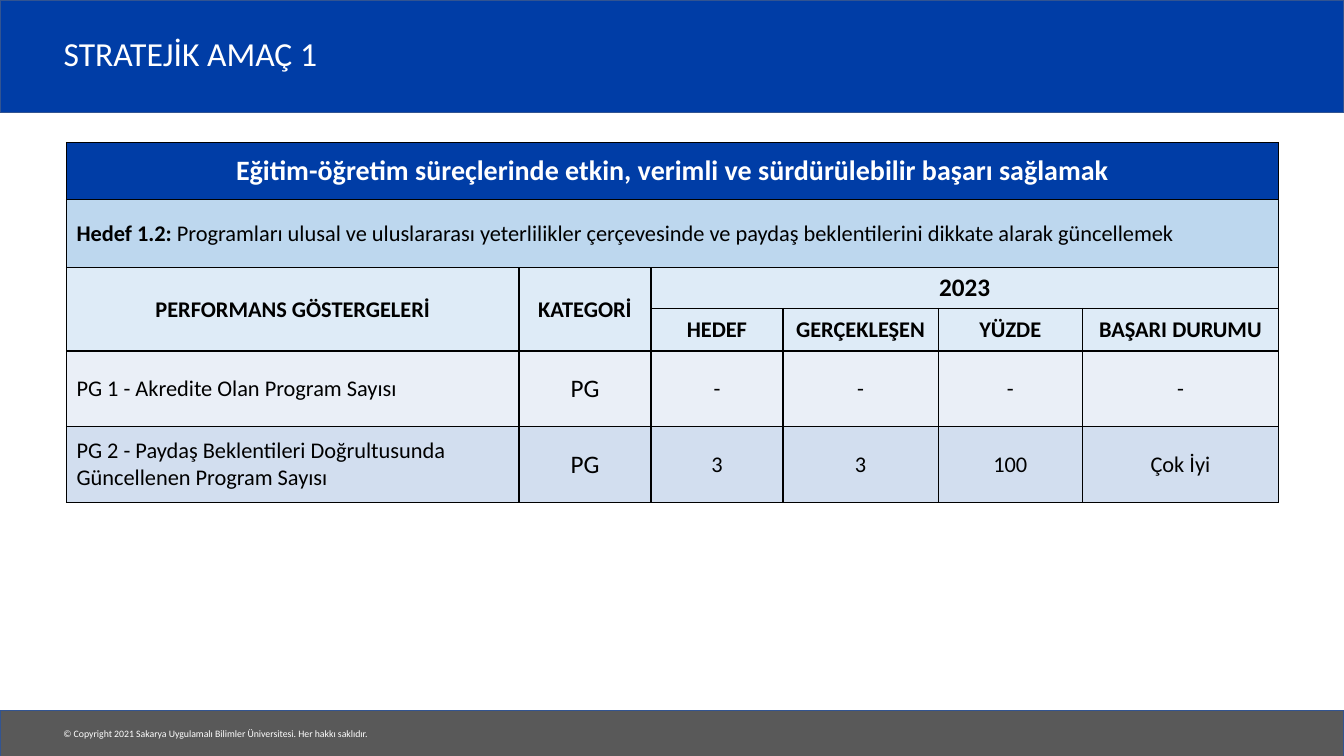
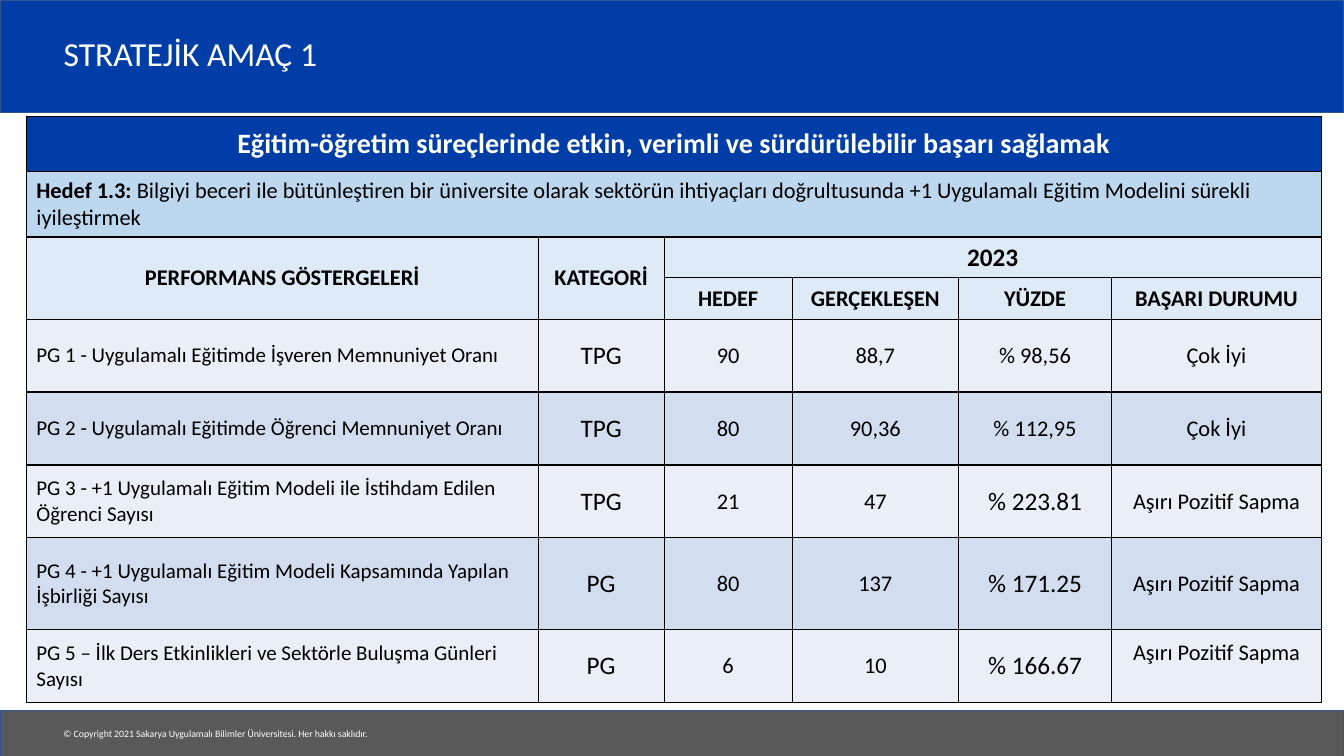
from dataclasses import dataclass
from typing import NamedTuple

import pptx
import pptx.dml.color
import pptx.enum.shapes
import pptx.enum.text
import pptx.oxml
import pptx.oxml.ns
import pptx.util

Pt = pptx.util.Pt
Align = pptx.enum.text.PP_ALIGN
Anchor = pptx.enum.text.MSO_ANCHOR

SLIDE_WIDTH, SLIDE_HEIGHT = 960, 540
FONT = "Calibri"
COLOURS = {
    "blue": "003DA6",
    "grey": "595959",
    "band_line": "325491",
    "target": "BDD7EE",
    "heading": "DEEBF7",
    "row_light": "EAEFF7",
    "row_dark": "D2DEEF",
    "black": "000000",
    "white": "FFFFFF",
}
TITLE = "STRATEJİK AMAÇ 1"
COPYRIGHT = "© Copyright 2021 Sakarya Uygulamalı Bilimler Üniversitesi. Her hakkı saklıdır."
GOAL = "Eğitim-öğretim süreçlerinde etkin, verimli ve sürdürülebilir başarı sağlamak"
YEAR = "2023"
ROW_HEADINGS = ["PERFORMANS GÖSTERGELERİ", "KATEGORİ"]
YEAR_HEADINGS = ["HEDEF", "GERÇEKLEŞEN", "YÜZDE", "BAŞARI DURUMU"]
HEADER_ROWS = 4


class Band(NamedTuple):
    top: float
    height: float
    fill: str


class Indicator(NamedTuple):
    name: str
    category: str
    target: str
    actual: str
    percent: str
    status: str
    percent_size: float = 16
    status_bottom: float = 3.6


@dataclass
class TargetTable:
    left: float
    top: float
    widths: list[float]
    heights: list[float]
    label: str
    target: str
    indicators: list[Indicator]
    name_size: float


BANDS = [Band(0, 80.6, "blue"), Band(507.4, 32.9, "grey")]

TABLES = [
    TargetTable(
        left=47.5,
        top=102,
        widths=[323.2, 94.3, 94.3, 110.9, 103, 140.1],
        heights=[40.4, 48.8, 29.2, 30.4, 54, 54],
        label="Hedef 1.2: ",
        target="Programları ulusal ve uluslararası yeterlilikler çerçevesinde ve "
               "paydaş beklentilerini dikkate alarak güncellemek",
        indicators=[
            Indicator("PG 1 - Akredite Olan Program Sayısı", "PG", "-", "-", "-", "-"),
            Indicator("PG 2 - Paydaş Beklentileri Doğrultusunda Güncellenen Program Sayısı",
                      "PG", "3", "3", "100", "Çok İyi"),
        ],
        name_size=16,
    ),
    TargetTable(
        left=18.8,
        top=83.4,
        widths=[365.6, 90, 91.5, 118.8, 109.4, 149.8],
        heights=[38.9, 47, 29.2, 29.5, 52.1, 52.1, 52.1, 65.6, 52.1],
        label="Hedef 1.3: ",
        target="Bilgiyi beceri ile bütünleştiren bir üniversite olarak sektörün ihtiyaçları "
               "doğrultusunda +1 Uygulamalı Eğitim Modelini sürekli iyileştirmek",
        indicators=[
            Indicator("PG 1 - Uygulamalı Eğitimde İşveren Memnuniyet Oranı",
                      "TPG", "90", "88,7", "% 98,56", "Çok İyi"),
            Indicator("PG 2 - Uygulamalı Eğitimde Öğrenci Memnuniyet Oranı",
                      "TPG", "80", "90,36", "% 112,95", "Çok İyi"),
            Indicator("PG 3 - +1 Uygulamalı Eğitim Modeli ile İstihdam Edilen Öğrenci Sayısı",
                      "TPG", "21", "47", "% 223.81", "Aşırı Pozitif Sapma", 18),
            Indicator("PG 4 - +1 Uygulamalı Eğitim Modeli Kapsamında Yapılan İşbirliği Sayısı",
                      "PG", "80", "137", "% 171.25", "Aşırı Pozitif Sapma", 18),
            Indicator("PG 5 – İlk Ders Etkinlikleri ve Sektörle Buluşma Günleri Sayısı",
                      "PG", "6", "10", "% 166.67", "Aşırı Pozitif Sapma", 18, 22),
        ],
        name_size=15,
    ),
]


def rgb(name: str) -> pptx.dml.color.RGBColor:
    return pptx.dml.color.RGBColor.from_string(COLOURS[name])


def format_run(run, size: float, colour: str, bold: bool = False) -> None:
    run.font.name = FONT
    run.font.size = Pt(size)
    run.font.bold = bold
    run.font.color.rgb = rgb(colour)


def dress_layout(layout, slide) -> None:
    """Draw the bands and copyright line on the slide, then move them to its layout."""
    for placeholder in list(layout.placeholders):
        if placeholder.placeholder_format.idx != 0:
            placeholder.element.getparent().remove(placeholder.element)
    parts = []
    for band in BANDS:
        shape = slide.shapes.add_shape(
            pptx.enum.shapes.MSO_SHAPE.RECTANGLE,
            Pt(0), Pt(band.top), Pt(SLIDE_WIDTH), Pt(band.height))
        shape.shadow.inherit = False
        shape.fill.solid()
        shape.fill.fore_color.rgb = rgb(band.fill)
        shape.line.color.rgb = rgb("band_line")
        shape.line.width = Pt(1)
        parts.append(shape)
    footer = slide.shapes.add_textbox(Pt(38.2), Pt(516.2), Pt(236.9), Pt(15.8))
    footer.text_frame.word_wrap = False
    footer.text_frame.text = COPYRIGHT
    format_run(footer.text_frame.paragraphs[0].runs[0], 7, "white")
    parts.append(footer)
    for shape in parts:
        layout.shapes.element.append(shape.element)


def set_title(slide) -> None:
    title = slide.shapes.title
    title.left, title.top, title.width, title.height = Pt(38.2), Pt(13.7), Pt(794), Pt(52.6)
    title.text_frame.text = TITLE
    title.text_frame.auto_size = pptx.enum.text.MSO_AUTO_SIZE.NONE
    title.text_frame.vertical_anchor = Anchor.MIDDLE
    paragraph = title.text_frame.paragraphs[0]
    paragraph.alignment = Align.LEFT
    paragraph.line_spacing = 0.9
    format_run(paragraph.runs[0], 24, "white")


def style_cell(cell, fill: str) -> None:
    properties = cell._tc.get_or_add_tcPr()
    for side in ("lnL", "lnR", "lnT", "lnB"):
        properties.append(pptx.oxml.parse_xml(
            f'<a:{side} {pptx.oxml.ns.nsdecls("a")} w="{Pt(1)}"><a:solidFill>'
            f'<a:srgbClr val="{COLOURS["black"]}"/></a:solidFill></a:{side}>'))
    cell.fill.solid()
    cell.fill.fore_color.rgb = rgb(fill)
    cell.vertical_anchor = Anchor.MIDDLE


def write_cell(cell, text: str, size: float = 16, bold: bool = False,
               colour: str = "black", alignment=Align.CENTER) -> None:
    cell.text_frame.text = text
    paragraph = cell.text_frame.paragraphs[0]
    paragraph.alignment = alignment
    format_run(paragraph.runs[0], size, colour, bold)


def write_header(table, content: TargetTable) -> None:
    last = len(content.widths) - 1
    for row in (0, 1):
        table.cell(row, 0).merge(table.cell(row, last))
    write_cell(table.cell(0, 0), GOAL, 20, True, "white")
    write_cell(table.cell(1, 0), content.label, bold=True, alignment=Align.LEFT)
    target_run = table.cell(1, 0).text_frame.paragraphs[0].add_run()
    target_run.text = content.target
    format_run(target_run, 16, "black")

    for column, heading in enumerate(ROW_HEADINGS):
        table.cell(2, column).merge(table.cell(3, column))
        write_cell(table.cell(2, column), heading, bold=True)
    first_year_column = len(ROW_HEADINGS)
    table.cell(2, first_year_column).merge(table.cell(2, last))
    write_cell(table.cell(2, first_year_column), YEAR, 18, True)
    for column, heading in enumerate(YEAR_HEADINGS, first_year_column):
        write_cell(table.cell(3, column), heading, bold=True)


def write_indicator(table, row: int, indicator: Indicator, name_size: float) -> None:
    sizes = [name_size, 18, 16, 16, indicator.percent_size, 16]
    for column, (text, size) in enumerate(zip(indicator, sizes)):
        alignment = Align.CENTER if column else Align.LEFT
        write_cell(table.cell(row, column), text, size, alignment=alignment)
    table.cell(row, len(sizes) - 1).margin_bottom = Pt(indicator.status_bottom)


def add_target_table(slide, content: TargetTable) -> None:
    table = slide.shapes.add_table(
        len(content.heights), len(content.widths), Pt(content.left), Pt(content.top),
        Pt(sum(content.widths)), Pt(sum(content.heights))).table
    for column, width in zip(table.columns, content.widths):
        column.width = Pt(width)
    header_fills = ["blue", "target", "heading", "heading"]
    for index, height in enumerate(content.heights):
        table.rows[index].height = Pt(height)
        if index < HEADER_ROWS:
            fill = header_fills[index]
        else:
            fill = ("row_light", "row_dark")[index % 2]
        for cell in table.rows[index].cells:
            style_cell(cell, fill)
    write_header(table, content)
    for row, indicator in enumerate(content.indicators, HEADER_ROWS):
        write_indicator(table, row, indicator, content.name_size)


def main() -> None:
    presentation = pptx.Presentation()
    presentation.slide_width = Pt(SLIDE_WIDTH)
    presentation.slide_height = Pt(SLIDE_HEIGHT)
    layout = presentation.slide_layouts.get_by_name("Title Only")
    slides = [presentation.slides.add_slide(layout) for _ in TABLES]
    dress_layout(layout, slides[0])
    for slide, content in zip(slides, TABLES):
        set_title(slide)
        add_target_table(slide, content)
    presentation.save("out.pptx")


if __name__ == "__main__":
    main()
